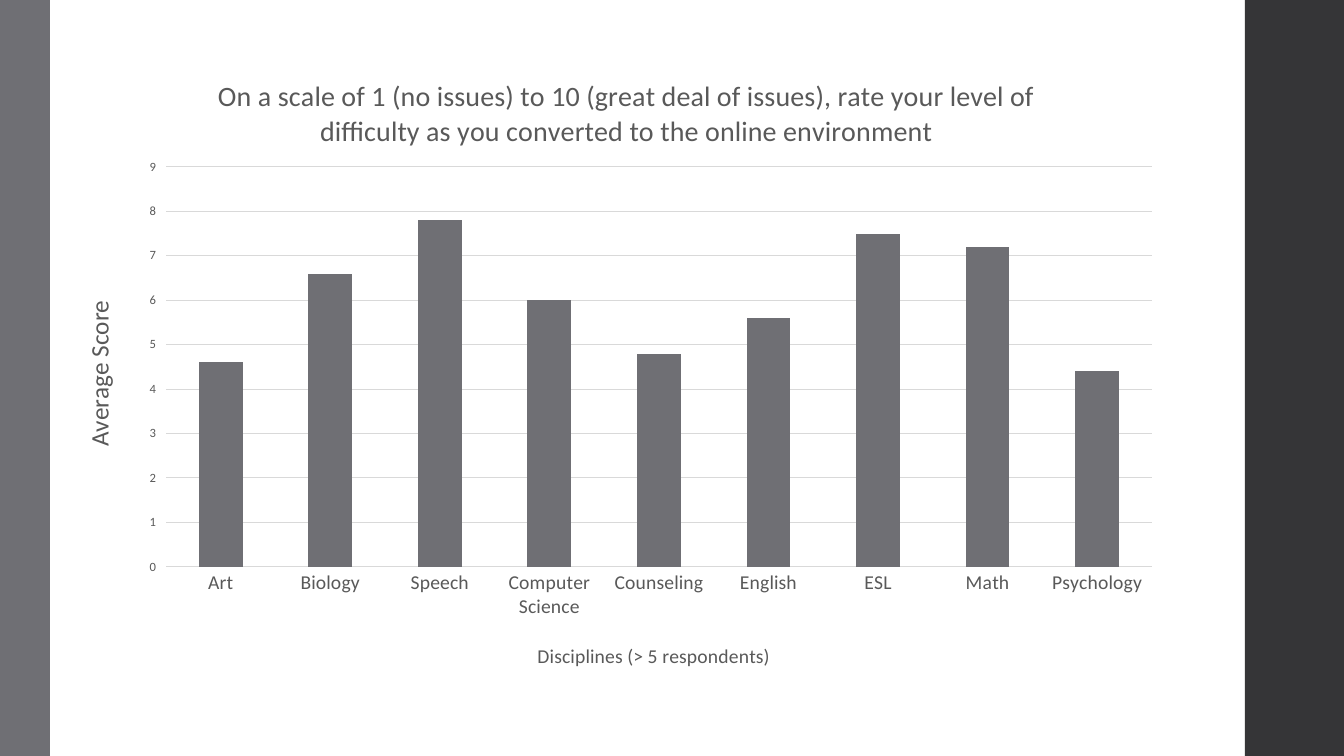
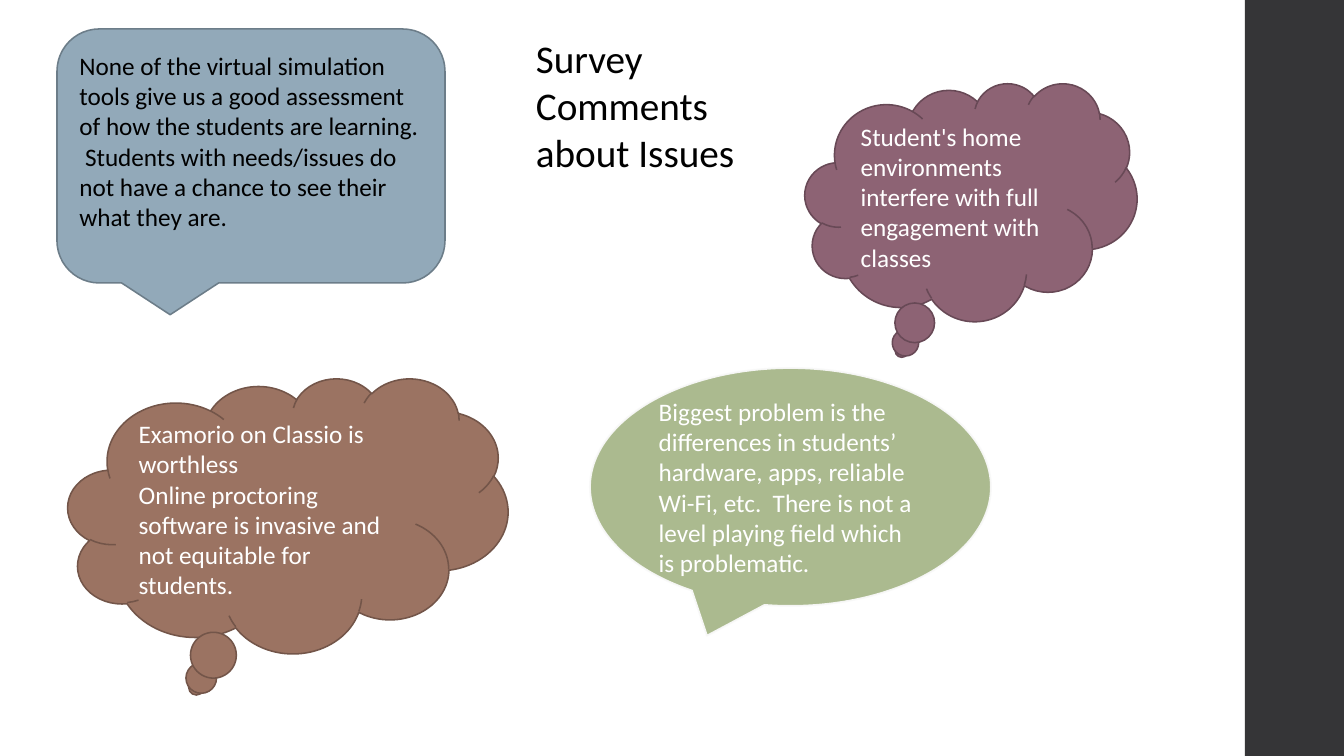
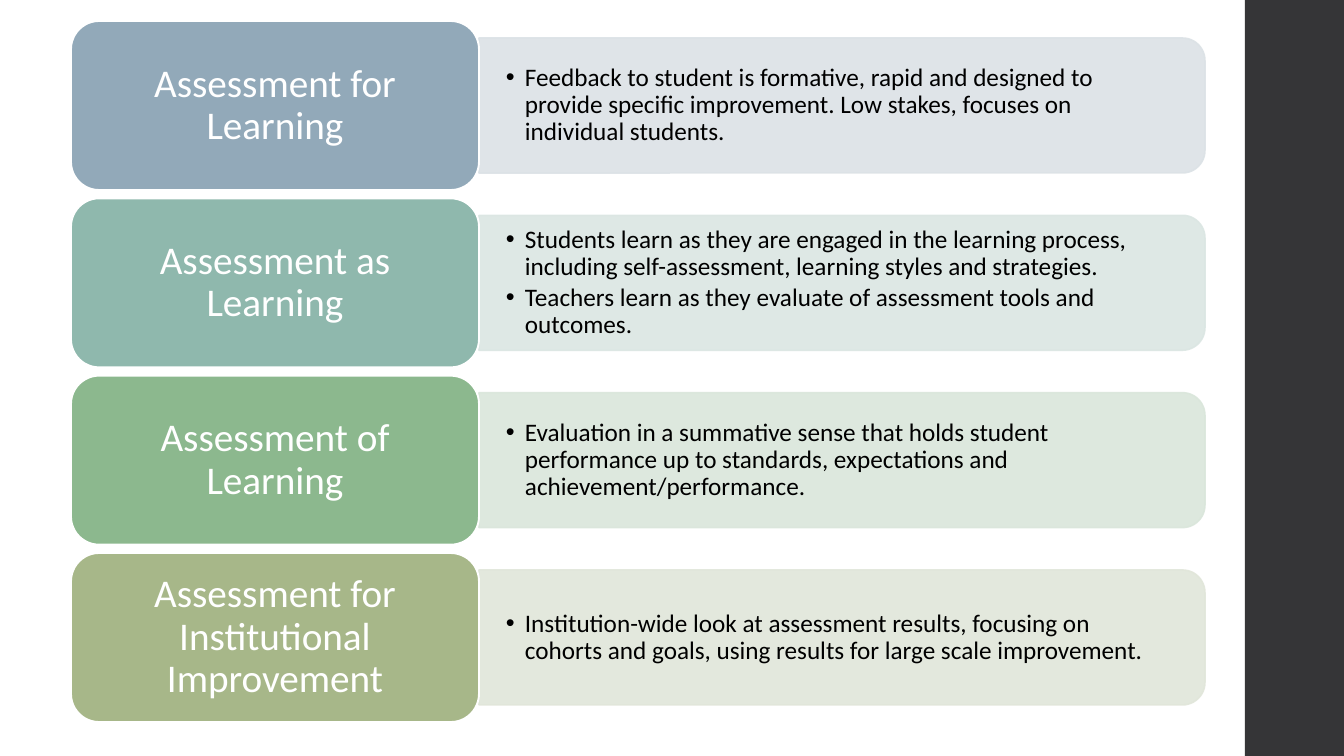
from collections import namedtuple

from lxml.etree import SubElement
from pptx import Presentation
from pptx.chart.data import CategoryChartData
from pptx.dml.color import RGBColor
from pptx.enum.chart import XL_CHART_TYPE, XL_TICK_MARK
from pptx.enum.shapes import MSO_SHAPE
from pptx.enum.text import MSO_ANCHOR, PP_ALIGN
from pptx.oxml.ns import qn
from pptx.util import Pt

Box = namedtuple("Box", "x y w h")

EMU_PER_PX = 12192000 / 1344
PAGE = Box(0, 0, 1344, 756)
LEFT_BAND = Box(0, 0, 50, 756)
RIGHT_BAND = Box(1245, 0, 99, 756)

FONT = "Calibri"
WHITE = RGBColor(0xFF, 0xFF, 0xFF)
OFF_WHITE = RGBColor(0xF9, 0xF9, 0xF9)
BLACK = RGBColor(0x00, 0x00, 0x00)
CHARCOAL = RGBColor(0x35, 0x35, 0x37)
GRAY = RGBColor(0x6F, 0x6F, 0x74)
CHART_TEXT = RGBColor(0x59, 0x59, 0x59)
GRID = RGBColor(0xD9, 0xD9, 0xD9)
BLUE = RGBColor(0x92, 0xA9, 0xB9)
BLUE_EDGE = RGBColor(0x6C, 0x7D, 0x89)
BLUE_TINT = RGBColor(0xDC, 0xE2, 0xE6)
TEAL = RGBColor(0x8F, 0xB8, 0xAD)
TEAL_TINT = RGBColor(0xDB, 0xE6, 0xE3)
GREEN = RGBColor(0x8C, 0xB8, 0x8E)
GREEN_TINT = RGBColor(0xDA, 0xE6, 0xDB)
OLIVE = RGBColor(0xA7, 0xB7, 0x89)
OLIVE_TINT = RGBColor(0xE1, 0xE6, 0xDA)
PLUM = RGBColor(0x8D, 0x63, 0x74)
PLUM_EDGE = RGBColor(0x68, 0x49, 0x56)
BROWN = RGBColor(0x9B, 0x73, 0x62)
BROWN_EDGE = RGBColor(0x73, 0x55, 0x49)

SCORES = {
    "Art": 4.6, "Biology": 6.6, "Speech": 7.8, "Computer Science": 6,
    "Counseling": 4.8, "English": 5.6, "ESL": 7.5, "Math": 7.2,
    "Psychology": 4.4,
}

# preset shape, box, fill, edge, edge width, text colour, bottom margin, text
COMMENTS = [
    (MSO_SHAPE.CLOUD_CALLOUT, Box(805, 83, 332, 238), PLUM, PLUM_EDGE, 1.1,
     WHITE, 5,
     ["Student's home environments interfere with full engagement with "
      "classes"]),
    (MSO_SHAPE.OVAL_CALLOUT, Box(590, 368, 401, 238), OLIVE, OFF_WHITE, 1.35,
     WHITE, 5,
     ["Biggest problem is the differences in students’ hardware, apps, "
      "reliable Wi-Fi, etc.  There is not a level playing field which is "
      "problematic."]),
    (MSO_SHAPE.ROUNDED_RECTANGULAR_CALLOUT, Box(57, 29, 388, 254), BLUE,
     BLUE_EDGE, 1.1, BLACK, 35,
     ["None of the virtual simulation tools give us a good assessment of how "
      "the students are learning.  Students with needs/issues do not have a "
      "chance to see their what they are."]),
    (MSO_SHAPE.CLOUD_CALLOUT, Box(68, 378, 440, 275), BROWN, BROWN_EDGE, 1.1,
     WHITE, 5,
     ["Examorio on Classio is worthless",
      "Online proctoring software is invasive and not equitable for "
      "students."]),
]

# heading, card colour, panel colour, bullets
ASSESSMENTS = [
    ("Assessment for Learning", BLUE, BLUE_TINT,
     ["Feedback to student is formative, rapid and designed to provide "
      "specific improvement. Low stakes, focuses on individual students."]),
    ("Assessment as Learning", TEAL, TEAL_TINT,
     ["Students learn as they are engaged in the learning process, including "
      "self-assessment, learning styles and strategies.",
      "Teachers learn as they evaluate of assessment tools and outcomes."]),
    ("Assessment of Learning", GREEN, GREEN_TINT,
     ["Evaluation in a summative sense that holds student performance up to "
      "standards, expectations and achievement/performance."]),
    ("Assessment for Institutional Improvement", OLIVE, OLIVE_TINT,
     ["Institution-wide look at assessment results, focusing on cohorts and "
      "goals, using results for large scale improvement."]),
]


def px(length):
    return round(length * EMU_PER_PX)


def place(box):
    return [px(length) for length in box]


def set_all(target, values):
    for name, value in values.items():
        setattr(target, name, value)


def set_font(font, size, color):
    set_all(font, {"name": FONT, "size": Pt(size), "bold": False})
    font.color.rgb = color


def add_block(page, preset, box, fill, edge=None, width=1):
    shape = page.shapes.add_shape(preset, *place(box))
    shape.shadow.inherit = False
    shape.fill.solid()
    shape.fill.fore_color.rgb = fill
    if edge is None:
        shape.line.fill.background()
    else:
        shape.line.color.rgb = edge
        shape.line.width = Pt(width)
    return shape


def make_translucent(shape, percent):
    for color in shape._element.spPr.iter(qn("a:srgbClr")):
        SubElement(color, qn("a:alpha"), val=str(percent * 1000))


def add_bullet(para, indent):
    props = para._p.get_or_add_pPr()
    props.set("marL", str(px(indent)))
    props.set("indent", str(-px(indent)))
    SubElement(props, qn("a:buFont"), typeface="Arial")
    SubElement(props, qn("a:buChar"), char="•")


def write(shape, lines, size, color, margins, anchor=MSO_ANCHOR.MIDDLE,
          bullet=0, **layout):
    """Fill a shape with paragraphs; margins are left, top, right, bottom."""
    frame = shape.text_frame
    sides = ("margin_left", "margin_top", "margin_right", "margin_bottom")
    set_all(frame, dict(zip(sides, place(margins))))
    set_all(frame, {"word_wrap": True, "vertical_anchor": anchor})
    for index, line in enumerate(lines):
        para = frame.add_paragraph() if index else frame.paragraphs[0]
        if bullet:
            add_bullet(para, bullet)
        set_all(para, {"alignment": PP_ALIGN.LEFT, **layout})
        span = para.add_run()
        span.text = line
        set_font(span.font, size, color)


def new_page(deck):
    page = deck.slides.add_slide(deck.slide_layouts[6])
    add_block(page, MSO_SHAPE.RECTANGLE, RIGHT_BAND, CHARCOAL)
    return page


def set_layout(element, position, chart_box, box, inner=False):
    """Fix a chart part at a page box; a size of 0 is left automatic."""
    for old in element.findall(qn("c:layout")):
        element.remove(old)
    layout = element.makeelement(qn("c:layout"), {})
    element.insert(position, layout)
    manual = SubElement(layout, qn("c:manualLayout"))
    if inner:
        SubElement(manual, qn("c:layoutTarget"), val="inner")
    for mode in ("xMode", "yMode"):
        SubElement(manual, qn("c:" + mode), val="edge")
    shares = {
        "x": (box.x - chart_box.x) / chart_box.w,
        "y": (box.y - chart_box.y) / chart_box.h,
        "w": box.w / chart_box.w,
        "h": box.h / chart_box.h,
    }
    for name, share in shares.items():
        if share:
            SubElement(manual, qn("c:" + name), val=f"{share:.4f}")


def title_chart_part(title, text, size, chart_box, x, y):
    para = title.text_frame.paragraphs[0]
    span = para.add_run()
    span.text = text
    set_font(span.font, size, CHART_TEXT)
    set_layout(title._element, 1, chart_box, Box(x, y, 0, 0))


def add_score_chart(page, box):
    data = CategoryChartData()
    data.categories = list(SCORES)
    data.add_series("Series 1", list(SCORES.values()))
    chart = page.shapes.add_chart(
        XL_CHART_TYPE.COLUMN_CLUSTERED, *place(box), data).chart
    set_font(chart.font, 10, BLACK)
    set_all(chart, {"has_legend": False, "has_title": True})

    plot = chart.plots[0]
    set_all(plot, {"gap_width": 150, "vary_by_categories": False})
    bars = plot.series[0].format.fill
    bars.solid()
    bars.fore_color.rgb = GRAY

    disciplines, scores = chart.category_axis, chart.value_axis
    set_all(disciplines, {"major_tick_mark": XL_TICK_MARK.NONE})
    set_all(scores, {"minimum_scale": 0, "maximum_scale": 9, "major_unit": 1,
                     "major_tick_mark": XL_TICK_MARK.OUTSIDE,
                     "has_major_gridlines": True})
    set_font(disciplines.tick_labels.font, 14, CHART_TEXT)
    set_font(scores.tick_labels.font, 9, CHART_TEXT)
    for line in (disciplines.format.line, scores.major_gridlines.format.line):
        line.color.rgb = GRID
        line.width = Pt(0.75)
    scores.format.line.fill.background()

    title_chart_part(
        chart.chart_title,
        "On a scale of 1 (no issues) to 10 (great deal of issues), rate your "
        "level of difficulty as you converted to the online environment",
        20, box, box.x + 148, box.y + 29)
    title_chart_part(disciplines.axis_title, "Disciplines (> 5 respondents)",
                     14, box, box.x + 469, box.y + 597)
    title_chart_part(scores.axis_title, "Average Score",
                     18, box, box.x + 12, box.y + 254)
    body = scores.axis_title.text_frame._txBody.bodyPr
    body.set("rot", "-5400000")
    body.set("vert", "horz")
    set_layout(chart._chartSpace.chart.plotArea, 0, box,
               Box(box.x + 101, box.y + 125, 986, 400), inner=True)


def add_comment(page, preset, box, fill, edge, width, color, bottom, lines):
    callout = add_block(page, preset, box, fill, edge, width)
    write(callout, lines, 18, color, (10, 5, 10, bottom))
    if edge == OFF_WHITE:
        make_translucent(callout, 95)


def add_assessment_row(page, box, heading, fill, tint, bullets):
    card = Box(box.x, box.y, 408, box.h)
    panel = Box(card.x + card.w, box.y + 17, box.w - card.w, box.h - 34)
    upright = Box(panel.x + (panel.w - panel.h) / 2,
                  panel.y + (panel.h - panel.w) / 2, panel.h, panel.w)
    back = add_block(page, MSO_SHAPE.ROUND_2_SAME_RECTANGLE, upright, tint,
                     tint, 1.1)
    back.rotation = 90
    make_translucent(back, 90)

    details = page.shapes.add_textbox(
        *place(Box(panel.x, panel.y + 6, panel.w - 7, panel.h - 12)))
    write(details, bullets, 18, BLACK, (27, 14, 27, 14), bullet=19,
          line_spacing=0.9, space_after=Pt(2.7))

    label = add_block(page, MSO_SHAPE.ROUNDED_RECTANGLE, card, fill, WHITE,
                      1.35)
    write(label, [heading], 28, WHITE, (12, 6, 12, 6),
          alignment=PP_ALIGN.CENTER, line_spacing=0.9)


def build_chart_page(deck):
    page = new_page(deck)
    add_block(page, MSO_SHAPE.RECTANGLE, LEFT_BAND, GRAY)
    add_score_chart(page, Box(65, 42, 1110, 642))


def build_comments_page(deck):
    page = new_page(deck)
    for comment in COMMENTS:
        add_comment(page, *comment)
    title = page.shapes.add_textbox(*place(Box(526, 29, 264, 152)))
    write(title, ["Survey Comments about Issues"], 28, BLACK, (10, 5, 10, 5),
          anchor=MSO_ANCHOR.TOP)


def build_assessment_page(deck):
    page = new_page(deck)
    area = Box(71, 21, 1134, 701)
    row_height = 169
    pitch = (area.h - row_height) / (len(ASSESSMENTS) - 1)
    for index, assessment in enumerate(ASSESSMENTS):
        row = Box(area.x, area.y + index * pitch, area.w, row_height)
        add_assessment_row(page, row, *assessment)


def main():
    deck = Presentation()
    set_all(deck, {"slide_width": px(PAGE.w), "slide_height": px(PAGE.h)})
    build_chart_page(deck)
    build_comments_page(deck)
    build_assessment_page(deck)
    deck.save("out.pptx")


if __name__ == "__main__":
    main()
